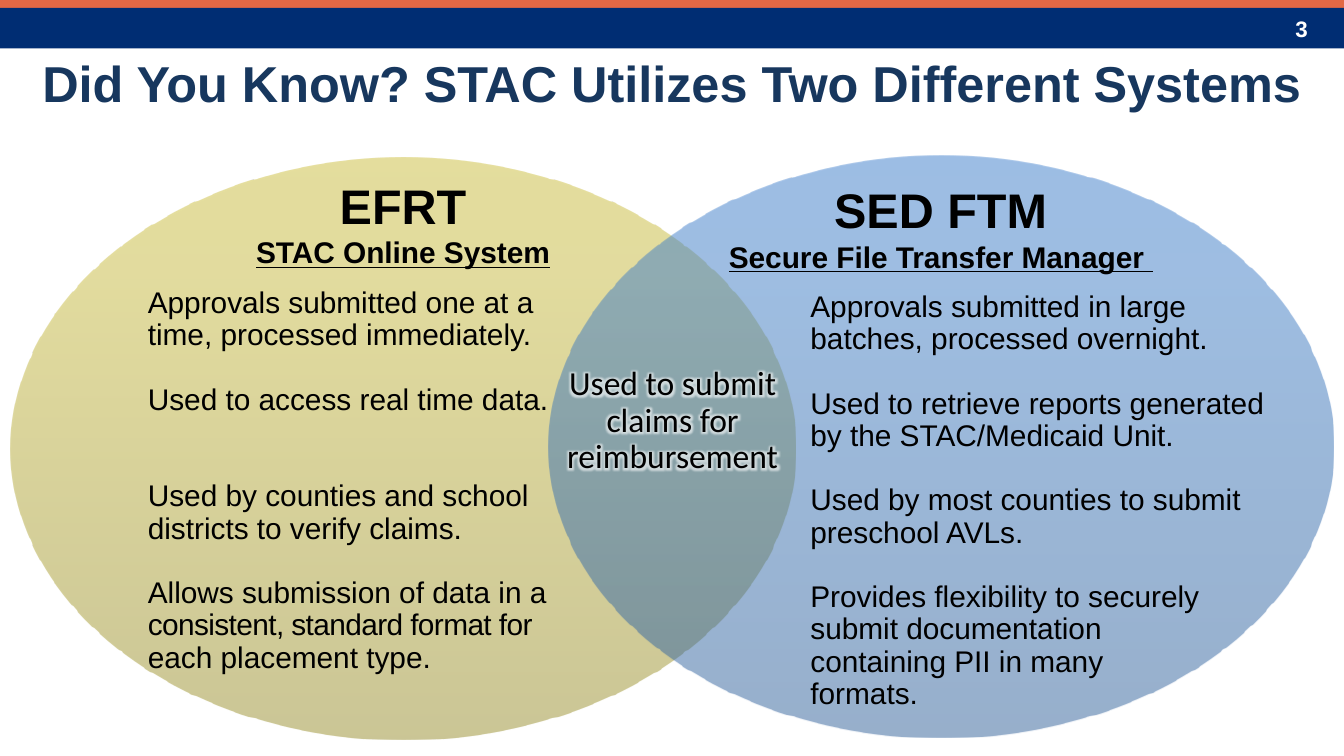
"""Build the slide that compares the two STAC systems."""
from dataclasses import dataclass

import lxml.etree
import pptx
import pptx.dml.color
import pptx.enum.shapes
import pptx.enum.text
import pptx.oxml
import pptx.oxml.ns
import pptx.util

Inches = pptx.util.Inches
Pt = pptx.util.Pt
Align = pptx.enum.text.PP_ALIGN
Anchor = pptx.enum.text.MSO_ANCHOR
Kind = pptx.enum.shapes.MSO_SHAPE
qn = pptx.oxml.ns.qn
NS = "http://schemas.openxmlformats.org/drawingml/2006/main"
GAP = 17.3


@dataclass
class Box:
    x: float
    y: float
    w: float
    h: float

    def dims(self) -> list:
        return [Inches(v) for v in (self.x, self.y, self.w, self.h)]


@dataclass
class Item:
    text: str
    gap: float = GAP
    tight: str = ""
    rest: str = ""


@dataclass
class System:
    name: str
    label: str
    oval: Box
    head: Box
    body: Box
    shades: tuple
    items: list


def color(value: str) -> pptx.dml.color.RGBColor:
    return pptx.dml.color.RGBColor.from_string(value)


def add_run(para, text: str, size: float, tint: str = "000000",
            bold: bool = False, line: bool = False, face: str = "Arial"):
    run = para.add_run()
    run.text = text
    font = run.font
    font.name, font.size, font.bold = face, Pt(size), bold
    font.underline = line
    font.color.rgb = color(tint)
    return run


def add_lines(para, text: str, size: float, **style) -> list:
    runs = []
    for num, part in enumerate(text.split("\n")):
        if num:
            para.add_line_break()
        runs.append(add_run(para, part, size, **style))
    return runs


def add_shape(slide, kind, box: Box):
    shape = slide.shapes.add_shape(kind, *box.dims())
    shape.shadow.inherit = False
    shape.line.fill.background()
    return shape


def add_bar(slide, box: Box, tint: str) -> None:
    bar = add_shape(slide, Kind.RECTANGLE, box)
    bar.fill.solid()
    bar.fill.fore_color.rgb = color(tint)


def add_oval(slide, box: Box, shades: tuple) -> None:
    oval = add_shape(slide, Kind.OVAL, box)
    stops = "".join(
        f'<a:gs pos="{pos}"><a:srgbClr val="{tint}"><a:alpha val="50000"/>'
        f'</a:srgbClr></a:gs>'
        for pos, tint in zip((0, 80000, 100000), shades))
    grad = pptx.oxml.parse_xml(
        f'<a:gradFill xmlns:a="{NS}" rotWithShape="1"><a:gsLst>{stops}'
        f'</a:gsLst><a:lin ang="16200000" scaled="0"/></a:gradFill>')
    oval.element.spPr.find(qn("a:prstGeom")).addnext(grad)


def add_text(slide, box: Box, align):
    frame = slide.shapes.add_textbox(*box.dims()).text_frame
    frame.word_wrap = True
    para = frame.paragraphs[0]
    para.alignment = align
    return frame, para


def place(holder, box: Box, anchor):
    holder.left, holder.top, holder.width, holder.height = box.dims()
    frame = holder.text_frame
    frame.word_wrap = True
    frame.auto_size = pptx.enum.text.MSO_AUTO_SIZE.NONE
    frame.vertical_anchor = anchor
    return frame


def add_head(slide, sys: System) -> None:
    para = add_text(slide, sys.head, Align.CENTER)[1]
    add_run(para, sys.name, 26, bold=True)
    para.add_line_break()
    add_run(para, sys.label, 16, bold=True, line=True)


def fill_list(holder, sys: System) -> None:
    frame = place(holder, sys.body, Anchor.TOP)
    for num, item in enumerate(sys.items):
        para = frame.add_paragraph() if num else frame.paragraphs[0]
        props = para._p.get_or_add_pPr()
        props.set("marL", "0")
        props.set("indent", "0")
        lxml.etree.SubElement(props, qn("a:buNone"))
        para.line_spacing = 0.9
        para.space_before = Pt(item.gap if num else 0)
        add_lines(para, item.text, 16)
        if item.tight:
            add_run(para, item.tight, 16)._r.rPr.set("spc", "-30")
            add_run(para, item.rest, 16)


def add_glow(run) -> None:
    glow = pptx.oxml.parse_xml(
        f'<a:effectLst xmlns:a="{NS}"><a:glow rad="101600">'
        f'<a:srgbClr val="FFFFFF"><a:alpha val="60000"/></a:srgbClr>'
        f'</a:glow></a:effectLst>')
    run._r.rPr.find(qn("a:solidFill")).addnext(glow)


SYSTEMS = [
    System("EFRT", "STAC Online System",
           Box(0.08, 1.17, 5.84, 4.33), Box(0.5, 1.26, 5, 0.81),
           Box(1, 2.09, 3.2, 3.01), ("988E2C", "C7BA3D", "CBBD3B"),
           [Item("Approvals submitted one at a time, processed immediately."),
            Item("Used to access real time data."),
            Item("Used by counties and school districts to verify claims.",
                 2 * GAP),
            Item("Allows submission of data in a ", GAP,
                 "consistent, standard format for ", "each placement type.")]),
    System("SED FTM", "Secure File Transfer Manager ",
           Box(4.08, 1.16, 5.84, 4.33), Box(4.5, 1.29, 5, 0.81),
           Box(5.93, 2.12, 4.57, 3.25), ("2F5F99", "3D7CC7", "3A7CCB"),
           [Item("Approvals submitted in large\nbatches, processed overnight."),
            Item("Used to retrieve reports generated\n"
                 "by the STAC/Medicaid Unit."),
            Item("Used by most counties to submit\npreschool AVLs."),
            Item("Provides flexibility to securely"),
            Item("submit documentation\ncontaining PII in many\nformats.", 0)]),
]


def main() -> None:
    deck = pptx.Presentation()
    deck.slide_width, deck.slide_height = Inches(10), Inches(10 * 9 / 16)
    slide = deck.slides.add_slide(deck.slide_layouts[3])
    title, *bodies = slide.placeholders

    add_bar(slide, Box(0, -0.02, 10, 0.1), "E36845")
    add_bar(slide, Box(0, 0.06, 10, 0.3), "002D73")
    frame, para = add_text(slide, Box(7.5, 0.06, 2.33, 0.3), Align.RIGHT)
    frame.vertical_anchor = Anchor.MIDDLE
    add_run(para, "3", 12, "FFFFFF", True)

    for sys in SYSTEMS:
        add_oval(slide, sys.oval, sys.shades)
    tree = slide.shapes._spTree
    for holder in (title, *bodies):
        tree.append(holder.element)

    frame = place(title, Box(0, 0.37, 10, 0.48), Anchor.MIDDLE)
    para = frame.paragraphs[0]
    para.alignment = Align.CENTER
    add_run(para, "Did You Know? STAC Utilizes Two Different Systems",
            27, "17375E", True)

    for sys, body in zip(SYSTEMS, bodies):
        add_head(slide, sys)
        fill_list(body, sys)

    para = add_text(slide, Box(4.08, 2.68, 1.85, 0.92), Align.CENTER)[1]
    para.line_spacing = 0.9
    for run in add_lines(para, "Used to submit\nclaims for\nreimbursement",
                         18, face="Calibri"):
        add_glow(run)
    deck.save("out.pptx")


if __name__ == "__main__":
    main()
